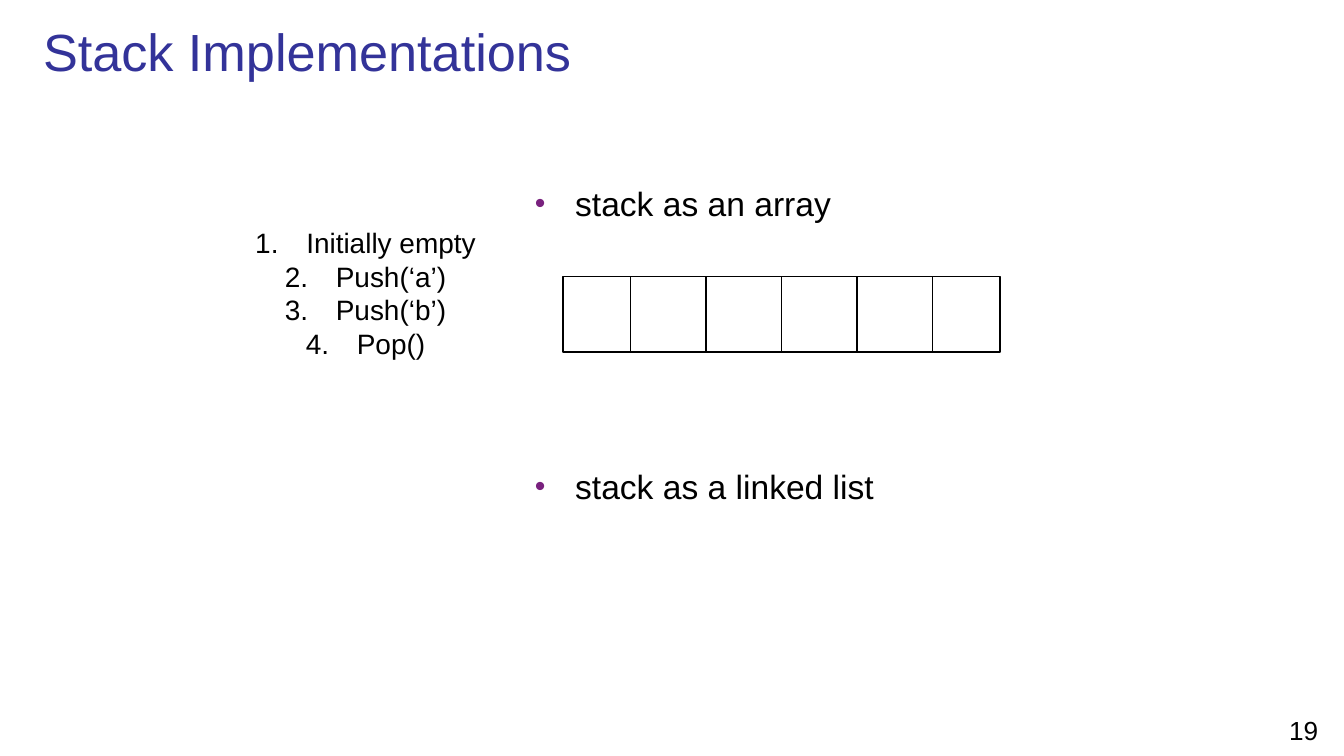
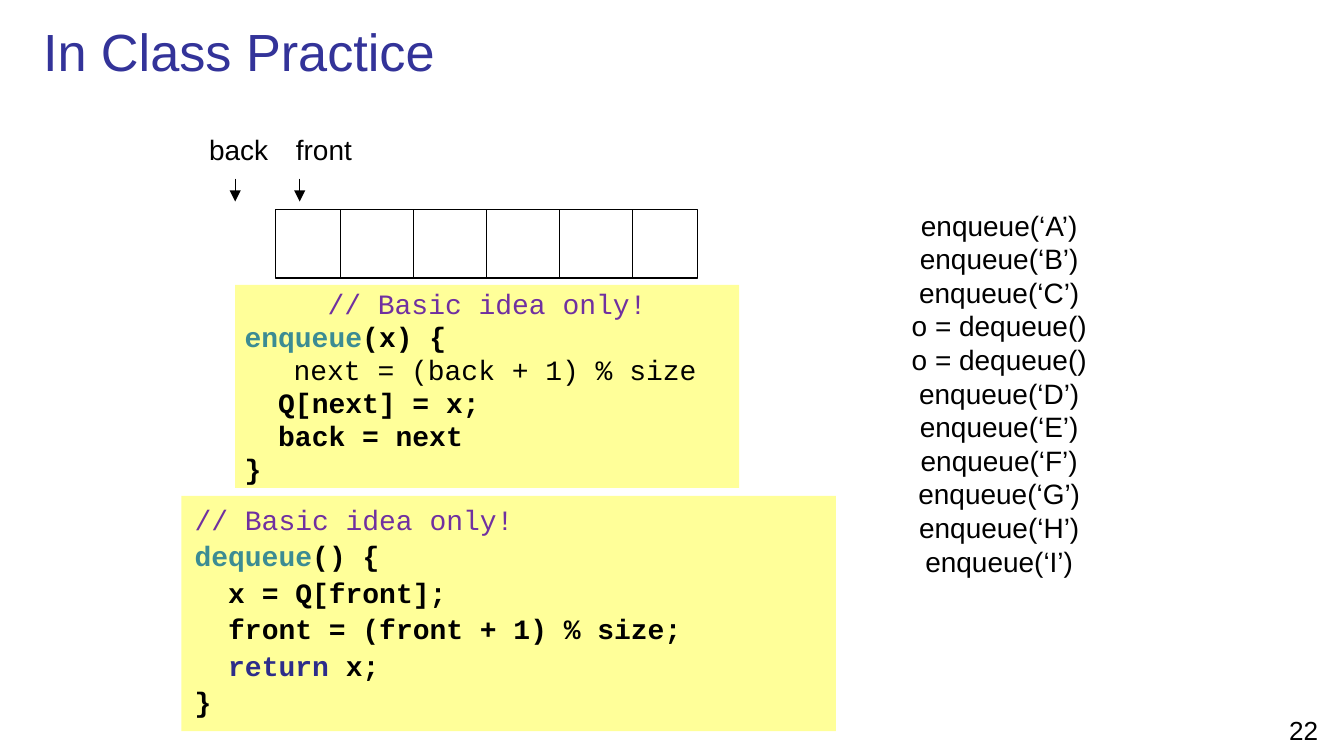
from dataclasses import dataclass
from typing import NamedTuple

from lxml import etree
from pptx import Presentation
from pptx.dml.color import RGBColor
from pptx.enum.shapes import MSO_CONNECTOR, MSO_SHAPE
from pptx.enum.text import MSO_ANCHOR, MSO_AUTO_SIZE, PP_ALIGN
from pptx.oxml.ns import qn
from pptx.util import Inches, Pt

BLACK = RGBColor(0x00, 0x00, 0x00)
TITLE_BLUE = RGBColor(0x33, 0x33, 0x99)
BULLET_PURPLE = RGBColor(0x79, 0x21, 0x7E)
CODE_YELLOW = RGBColor(0xFF, 0xFF, 0x99)
COMMENT_PURPLE = RGBColor(0x70, 0x30, 0xA0)
FUNCTION_TEAL = RGBColor(0x3C, 0x8C, 0x93)
KEYWORD_BLUE = RGBColor(0x2D, 0x2D, 0x8A)

SANS = "Arial"
MONO = "Courier New"
TEXT_SIZE = 15
BODY_SIZE = 18
CODE_INDENT = 0.25
TITLE_AND_BODY, TITLE_ONLY = 1, 5

OPERATIONS = ("Initially empty", "Push(‘a’)", "Push(‘b’)", "Pop()")
QUEUE_CALLS = (
    *(f"enqueue(‘{letter}’)" for letter in "ABC"),
    *("o = dequeue()",) * 2,
    *(f"enqueue(‘{letter}’)" for letter in "DEFGHI"),
)


class Area(NamedTuple):
    left: float
    top: float
    width: float
    height: float

    def lengths(self) -> tuple:
        return tuple(Inches(value) for value in self)


class Span(NamedTuple):
    text: str
    color: RGBColor = BLACK
    bold: bool = True


@dataclass(frozen=True)
class CodeLine:
    spans: tuple[Span, ...]
    indent: float = 0
    align: PP_ALIGN = PP_ALIGN.LEFT


@dataclass(frozen=True)
class CodeBox:
    area: Area
    lines: tuple[CodeLine, ...]
    inset: tuple[float, float] = (0.1, 0.05)
    line_spacing: float = 1.0


@dataclass(frozen=True)
class Pointer:
    label: str
    label_area: Area
    arrow_x: float


COMMENT = Span("// Basic idea only!", COMMENT_PURPLE, False)
CLOSING = CodeLine((Span("}"),))

ENQUEUE = CodeBox(
    Area(1.75, 2.12, 3.75, 1.51),
    (
        CodeLine((COMMENT,), align=PP_ALIGN.CENTER),
        CodeLine((Span("enqueue", FUNCTION_TEAL), Span("(x) {"))),
        CodeLine((Span("next = (back + 1) % size", bold=False),), 0.12, PP_ALIGN.CENTER),
        CodeLine((Span("Q[next] = x;"),), CODE_INDENT),
        CodeLine((Span("back = next"),), CODE_INDENT),
        CLOSING,
    ),
    inset=(0.07, 0.04),
    line_spacing=0.9,
)
DEQUEUE = CodeBox(
    Area(1.35, 3.69, 4.87, 1.75),
    (
        CodeLine((COMMENT,)),
        CodeLine((Span("dequeue", FUNCTION_TEAL), Span("() {"))),
        CodeLine((Span("x = Q[front];"),), CODE_INDENT),
        CodeLine((Span("front = (front + 1) % size;"),), CODE_INDENT),
        CodeLine((Span("return", KEYWORD_BLUE), Span(" x;")), CODE_INDENT),
        CLOSING,
    ),
)
POINTERS = (
    Pointer("front", Area(2.1, 0.94, 0.62, 0.35), 2.23),
    Pointer("back", Area(1.45, 0.94, 0.65, 0.35), 1.75),
)


def set_font(para, size: float, color: RGBColor = BLACK, name: str = SANS) -> None:
    para.font.name = name
    para.font.size = Pt(size)
    para.font.color.rgb = color


def set_indent(para, left: float, first: float) -> None:
    properties = para._p.get_or_add_pPr()
    properties.set("marL", str(Inches(left)))
    properties.set("indent", str(Inches(first)))


def add_bullet(para) -> None:
    properties = para._p.get_or_add_pPr()
    color = etree.SubElement(properties, qn("a:buClr"))
    etree.SubElement(color, qn("a:srgbClr"), val=str(BULLET_PURPLE))
    etree.SubElement(properties, qn("a:buSzPct"), val="90000")
    etree.SubElement(properties, qn("a:buFont"), typeface=SANS)
    etree.SubElement(properties, qn("a:buChar"), char="•")


def add_number(para) -> None:
    set_indent(para, 0.38, -0.38)
    etree.SubElement(para._p.get_or_add_pPr(), qn("a:buAutoNum"), type="arabicPeriod")


def add_page(deck, layout: int, title: str, number: int):
    """Add a slide with its title and page number."""
    page = deck.slides.add_slide(deck.slide_layouts[layout])
    heading = page.shapes.title
    heading.left, heading.top, heading.width, heading.height = Area(0.22, 0.08, 9.74, 0.59).lengths()
    frame = heading.text_frame
    frame.text = title
    frame.auto_size = MSO_AUTO_SIZE.NONE
    frame.vertical_anchor = MSO_ANCHOR.MIDDLE
    frame.paragraphs[0].alignment = PP_ALIGN.LEFT
    set_font(frame.paragraphs[0], 28, TITLE_BLUE)
    add_text(page.shapes, Area(9.4, 5.27, 0.6, 0.3), (str(number),), size=14)
    return page


def add_text(shapes, area: Area, lines: tuple[str, ...], size: float = TEXT_SIZE,
             wrap: bool = True, numbered: bool = False) -> None:
    """Add a text box of centred lines."""
    frame = shapes.add_textbox(*area.lengths()).text_frame
    frame.word_wrap = wrap
    frame.text = "\n".join(lines)
    for para in frame.paragraphs:
        para.alignment = PP_ALIGN.CENTER
        if numbered:
            add_number(para)
        set_font(para, size)


def fill_body(page, area: Area, items: dict[str, float]) -> None:
    """Fill the body placeholder with bullets, each with its space before in points."""
    body = page.placeholders[1]
    body.left, body.top, body.width, body.height = area.lengths()
    frame = body.text_frame
    frame.auto_size = MSO_AUTO_SIZE.NONE
    frame.vertical_anchor = MSO_ANCHOR.TOP
    frame.text = "\n".join(items)
    for para, space in zip(frame.paragraphs, items.values()):
        set_indent(para, 0.43, -0.3)
        add_bullet(para)
        para.space_before = Pt(space)
        set_font(para, BODY_SIZE)


def add_line(shapes, x: float, top: float, bottom: float):
    line = shapes.add_connector(
        MSO_CONNECTOR.STRAIGHT, Inches(x), Inches(top), Inches(x), Inches(bottom))
    line.line.color.rgb = BLACK
    line.line.width = Pt(0.75)
    etree.SubElement(line._element.spPr, qn("a:effectLst"))
    return line


def add_array(page, area: Area) -> None:
    """Draw six cells, the outer two slightly narrower than the rest."""
    shapes = page.shapes.add_group_shape().shapes
    frame = shapes.add_shape(MSO_SHAPE.RECTANGLE, *area.lengths())
    frame.shadow.inherit = False
    frame.fill.background()
    frame.line.color.rgb = BLACK
    frame.line.width = Pt(0.75)
    inner_cell = area.width * 9 / 52
    outer_cell = (area.width - 4 * inner_cell) / 2
    for index in range(5):
        x = area.left + outer_cell + index * inner_cell
        divider = add_line(shapes, x, area.top, area.top + area.height)
        if index == 2:
            divider.begin_connect(frame, 0)
            divider.end_connect(frame, 2)


def add_pointer(page, pointer: Pointer) -> None:
    shapes = page.shapes.add_group_shape().shapes
    add_text(shapes, pointer.label_area, (pointer.label,), wrap=False)
    arrow = add_line(shapes, pointer.arrow_x, 1.33, 1.5)
    etree.SubElement(arrow.line._get_or_add_ln(), qn("a:tailEnd"), type="triangle")


def add_code(page, code: CodeBox) -> None:
    box = page.shapes.add_shape(MSO_SHAPE.RECTANGLE, *code.area.lengths())
    box.shadow.inherit = False
    box.fill.solid()
    box.fill.fore_color.rgb = CODE_YELLOW
    box.line.fill.background()
    frame = box.text_frame
    frame.word_wrap = True
    frame.vertical_anchor = MSO_ANCHOR.TOP
    frame.margin_left = frame.margin_right = Inches(code.inset[0])
    frame.margin_top = frame.margin_bottom = Inches(code.inset[1])
    for index, line in enumerate(code.lines):
        para = frame.add_paragraph() if index else frame.paragraphs[0]
        para.alignment = line.align
        para.line_spacing = code.line_spacing
        para.space_before = Pt(1.5)
        set_indent(para, line.indent, 0)
        set_font(para, TEXT_SIZE, name=MONO)
        for span in line.spans:
            run = para.add_run()
            run.text = span.text
            run.font.color.rgb = span.color
            run.font.bold = span.bold


def add_stack_page(deck) -> None:
    page = add_page(deck, TITLE_AND_BODY, "Stack Implementations", 19)
    fill_body(page, Area(3.75, 1.31, 4.44, 3.69),
              {"stack as an array": 4, "stack as a linked list": 130})
    add_array(page, Area(4.19, 2.06, 3.25, 0.56))
    add_text(page.shapes, Area(1.75, 1.63, 1.94, 1.11), OPERATIONS, numbered=True)


def add_queue_page(deck) -> None:
    page = add_page(deck, TITLE_ONLY, "In Class Practice", 22)
    add_text(page.shapes, Area(5.56, 1.5, 3.75, 2.88), QUEUE_CALLS)
    add_array(page, Area(2.05, 1.56, 3.14, 0.51))
    for pointer in POINTERS:
        add_pointer(page, pointer)
    for code in (ENQUEUE, DEQUEUE):
        add_code(page, code)


def main() -> None:
    deck = Presentation()
    deck.slide_width = Inches(10)
    deck.slide_height = deck.slide_width * 9 // 16
    add_stack_page(deck)
    add_queue_page(deck)
    deck.save("out.pptx")


if __name__ == "__main__":
    main()
